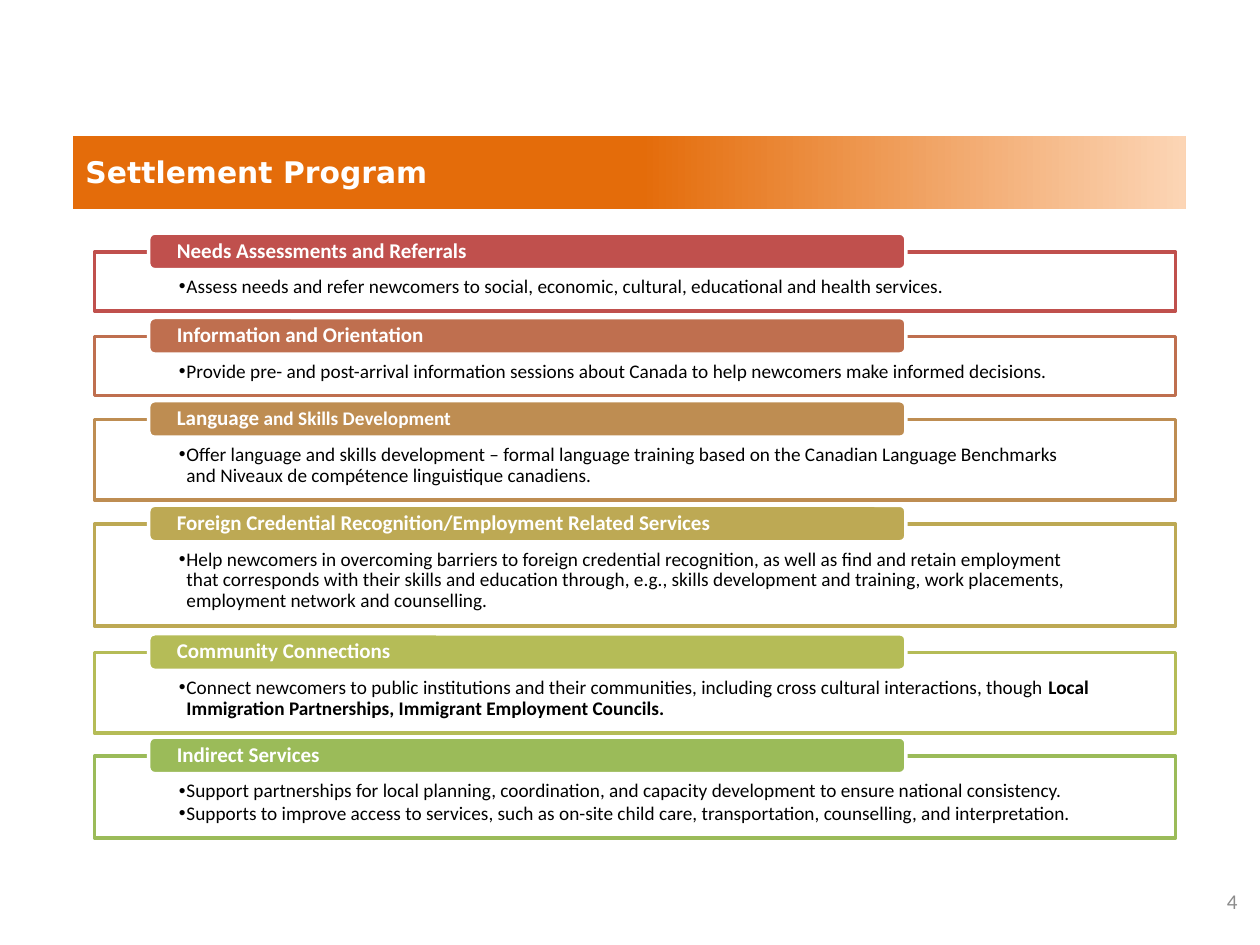
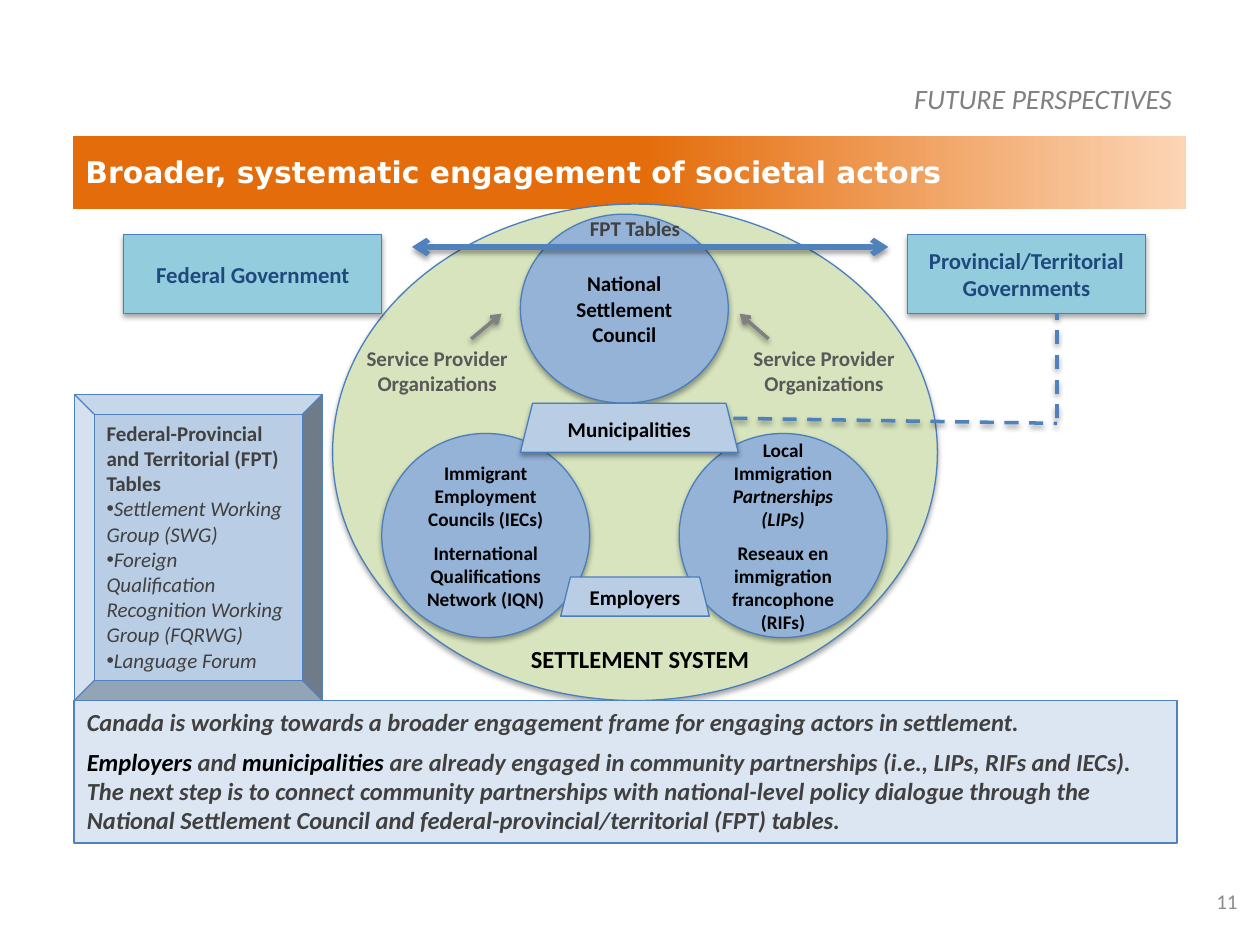
from lxml import etree
from pptx import Presentation
from pptx.dml.color import RGBColor
from pptx.enum.dml import MSO_LINE
from pptx.enum.shapes import MSO_CONNECTOR, MSO_SHAPE
from pptx.enum.text import MSO_ANCHOR, PP_ALIGN
from pptx.oxml.ns import qn
from pptx.util import Inches, Pt

COLORS = {
    "white": "FFFFFF", "black": "000000", "dark": "404040", "slate": "595959",
    "gray": "808080", "number": "8C8C8C", "navy": "1F497D",
    "orange": "E46C0A", "peach": "FCD5B5",
    "green": "D7E4BD", "teal": "93CDDD", "blue": "95B3D7",
    "pale": "B9CDE5", "ice": "DCE6F2", "edge": "4B7EBC", "accent": "4F81BD",
}
LEFT, MIDDLE, TOP = PP_ALIGN.LEFT, MSO_ANCHOR.MIDDLE, MSO_ANCHOR.TOP
CENTER, RIGHT = PP_ALIGN.CENTER, PP_ALIGN.RIGHT
ITALIC = {"italic": True}


def add_shadow(shape, opacity):
    """Give a shape or connector a soft shadow straight below it."""
    properties = shape._element.spPr
    effects = properties.find(qn("a:effectLst"))
    if effects is None:
        effects = etree.SubElement(properties, qn("a:effectLst"))
    outer = etree.SubElement(effects, qn("a:outerShdw"), blurRad="40000", dist="23000",
                             dir="5400000", rotWithShape="0")
    color = etree.SubElement(outer, qn("a:srgbClr"), val=COLORS["black"])
    etree.SubElement(color, qn("a:alpha"), val=str(opacity * 1000))


def add_box(page, kind, at, paragraphs=(), size=12, color="black", fill=None, line=None,
            width=0.75, shadow=False, anchor=MIDDLE, insets=(0.1, 0.05, 0.1, 0.05),
            layout=None, gap=0, bullets_from=None, indent=0, **base):
    """Add a shape (or a text box if kind is None); a paragraph is a list of (text, format)."""
    place = [Inches(value) for value in at]
    if kind is None:
        box = page.shapes.add_textbox(*place)
    else:
        box = page.shapes.add_shape(kind, *place)
        box.shadow.inherit = False
        box.fill.solid()
        box.fill.fore_color.rgb = RGBColor.from_string(COLORS[fill])
        if line:
            box.line.color.rgb = RGBColor.from_string(COLORS[line])
            box.line.width = Pt(width)
        else:
            box.line.fill.background()
        if shadow:
            add_shadow(box, 35)
    frame = box.text_frame
    frame.word_wrap = True
    frame.vertical_anchor = anchor
    for side, value in zip(("left", "top", "right", "bottom"), insets):
        setattr(frame, f"margin_{side}", Inches(value))
    for index, spans in enumerate(paragraphs):
        para = frame.add_paragraph() if index else frame.paragraphs[0]
        for name, value in {"alignment": LEFT, **(layout or {})}.items():
            setattr(para, name, value)
        if index and gap:
            para.space_before = Pt(gap)
        if bullets_from is not None and index >= bullets_from:
            properties = para._p.get_or_add_pPr()
            properties.set("marL", str(Inches(indent)))
            properties.set("indent", str(-Inches(indent)))
            etree.SubElement(properties, qn("a:buFont"), typeface="Arial")
            etree.SubElement(properties, qn("a:buChar"), char="•")
        for text, changes in spans:
            span = para.add_run()
            span.text = text
            values = {"name": "Calibri", "size": Pt(size), "color": color, **base, **changes}
            span.font.color.rgb = RGBColor.from_string(COLORS[values.pop("color")])
            for name, value in values.items():
                setattr(span.font, name, value)
    return box


deck = Presentation()
deck.slide_width, deck.slide_height = Inches(10), Inches(7.5)

# Shared banner, title and page number
pages = []
for title, number in (("Settlement Program", "4"),
                      ("Broader, systematic engagement of societal actors", "11")):
    page = deck.slides.add_slide(deck.slide_layouts[6])
    banner = add_box(page, MSO_SHAPE.RECTANGLE, (0.58, 1.08, 8.83, 0.58), fill="orange")
    banner.fill.gradient()
    banner.fill.gradient_angle = 0
    for stop, position, name in zip(banner.fill.gradient_stops, (0.51, 1), ("orange", "peach")):
        stop.position = position
        stop.color.rgb = RGBColor.from_string(COLORS[name])
    add_box(page, None, (0.58, 1.03, 8.92, 0.67), [[(title, {})]], 17, "white",
            name="DejaVu Sans", bold=True)
    add_box(page, None, (9, 6.95, 0.92, 0.4), [[(number, {})]], 12, "number",
            layout={"alignment": RIGHT})
    pages.append(page)
program, engagement = pages

# Settlement Program: framed services, each with a heading tab
services = [
    ("C0504D", 2, 0.47, [("Needs Assessments and Referrals", {})],
     [[("Assess needs and refer newcomers to social, economic, cultural, educational and "
        "health services.", {})]]),
    ("BF6F4F", 2.67, 0.47, [("Information and Orientation", {})],
     [[("Provide pre- and post-arrival information sessions about Canada to help newcomers "
        "make informed decisions.", {})]]),
    ("BE8D52", 3.33, 0.64,
     [("Language", {}), (" and Skills Development", {"size": Pt(11)})],
     [[("Offer language and skills development – formal language training based on the "
        "Canadian Language Benchmarks and Niveaux de compétence linguistique canadiens.", {})]]),
    ("BDA954", 4.16, 0.81,
     [("Foreign Credential Recognition/Employment Related Services", {})],
     [[("Help newcomers in overcoming barriers to foreign credential recognition, as well as "
        "find and retain employment that corresponds with their skills and education through, "
        "e.g., skills development and training, work placements, employment network and "
        "counselling.", {})]]),
    ("B5BC57", 5.18, 0.64, [("Community Connections", {})],
     [[("Connect newcomers to public institutions and their communities, including cross "
        "cultural interactions, though ", {}),
       ("Local Immigration Partnerships, Immigrant Employment Councils.", {"bold": True})]]),
    ("9BBB59", 6, 0.65, [("Indirect Services", {})],
     [[("Support partnerships for local planning, coordination, and capacity development to "
        "ensure national consistency.", {})],
      [("Supports to improve access to services, such as on-site child care, transportation, "
        "counselling, and interpretation.", {})]]),
]
for shade, top, height, heading, details in services:
    COLORS["service"] = shade
    add_box(program, MSO_SHAPE.RECTANGLE, (0.75, top, 8.58, height), details, 11,
            fill="white", line="service", width=2, anchor=TOP,
            insets=(0.67, 0.2, 0.67, 0.09), bullets_from=0, indent=0.06,
            layout={"line_spacing": 0.9, "space_after": Pt(1)})
    add_box(program, MSO_SHAPE.ROUNDED_RECTANGLE, (1.18, top - 0.15, 6.01, 0.29), [heading],
            12, "white", fill="service", line="white", width=2, bold=True,
            insets=(0.21, 0, 0.21, 0), layout={"line_spacing": 0.9})

# Engagement: settlement system and its actors
actors = [
    (MSO_SHAPE.OVAL, (2.64, 1.62, 4.8, 3.94), "green", "black", 12, []),
    (MSO_SHAPE.RECTANGLE, (0.98, 1.86, 2.05, 0.63), "teal", "navy", 13,
     [[("Federal Government", {})]]),
    (MSO_SHAPE.RECTANGLE, (7.2, 1.86, 1.89, 0.63), "teal", "navy", 13,
     [[("Provincial/Territorial Governments", {})]]),
    (MSO_SHAPE.OVAL, (4.13, 1.7, 1.65, 1.5), "blue", "black", 12,
     [[("National Settlement Council", {})]]),
    (MSO_SHAPE.OVAL, (3.03, 3.44, 1.65, 1.62), "blue", "black", 11,
     [[("Immigrant Employment Councils (IECs)", {})],
      [("International Qualifications Network (IQN)", {})]]),
    (MSO_SHAPE.OVAL, (5.39, 3.44, 1.65, 1.62), "blue", "black", 11,
     [[("Local Immigration ", {}), ("Partnerships (LIPs)", ITALIC)],
      [("Reseaux en immigration francophone (RIFs)", {})]]),
    (MSO_SHAPE.TRAPEZOID, (4.45, 4.58, 1.18, 0.31), "pale", "black", 12,
     [[("Employers", {})]]),
    (MSO_SHAPE.TRAPEZOID, (4.13, 3.2, 1.73, 0.39), "pale", "black", 12,
     [[("Municipalities", {})]]),
]
for kind, at, fill, color, size, paragraphs in actors:
    add_box(engagement, kind, at, paragraphs, size, color, fill=fill, line="edge",
            shadow=paragraphs != [[("Employers", {})]], gap=6, bold=True,
            layout={"alignment": CENTER})

# Arrows and dashed links between the actors
links = [
    ((3.27, 1.96), (7.05, 1.96), "accent", 3, None, ("headEnd", "tailEnd")),
    ((5.82, 3.32), (8.39, 3.36), "accent", 2, MSO_LINE.DASH, ()),
    ((8.39, 3.32), (8.39, 2.49), "accent", 2, MSO_LINE.DASH, ()),
    ((6.1, 2.69), (5.87, 2.49), "gray", 2, None, ("tailEnd",)),
    ((3.74, 2.69), (3.98, 2.49), "gray", 2, None, ("tailEnd",)),
]
for start, end, color, width, dash, arrowheads in links:
    link = engagement.shapes.add_connector(
        MSO_CONNECTOR.STRAIGHT, *[Inches(value) for value in start + end])
    link.line.color.rgb = RGBColor.from_string(COLORS[color])
    link.line.width = Pt(width)
    if dash:
        link.line.dash_style = dash
    for arrowhead in arrowheads:
        etree.SubElement(link.line._get_or_add_ln(), qn(f"a:{arrowhead}"), type="arrow")
    add_shadow(link, 38)

# Free labels
labels = [
    ("Service Provider Organizations", (2.8, 2.69, 1.34, 0.5), 12, "slate"),
    ("Service Provider Organizations", (5.87, 2.69, 1.34, 0.5), 12, "slate"),
    ("SETTLEMENT SYSTEM", (3.74, 5.06, 2.68, 0.34), 14, "black"),
    ("FPT Tables", (4.45, 1.66, 1.18, 0.3), 12, "dark"),
]
for text, at, size, color in labels:
    add_box(engagement, None, at, [[(text, {})]], size, color, anchor=TOP, bold=True,
            layout={"alignment": CENTER})
add_box(engagement, None, (6.57, 0.6, 2.83, 0.37), [[("FUTURE PERSPECTIVES", {})]], 16, "gray",
        anchor=TOP, italic=True, layout={"alignment": RIGHT})

# Summary panel
black = {"color": "black"}
add_box(engagement, MSO_SHAPE.RECTANGLE, (0.59, 5.56, 8.75, 1.13), [
    [("Canada is working towards a broader engagement frame for engaging actors in "
      "settlement.", {})],
    [("Employers", black), (" and ", {}), ("municipalities", black),
     (" are already engaged in community partnerships (i.e., LIPs, RIFs and IECs). The next "
      "step is to connect community partnerships with national-level policy dialogue through "
      "the National Settlement Council and federal-provincial/territorial (FPT) tables.", {})],
], 14, "dark", fill="ice", line="accent", width=1, anchor=TOP, gap=6, bold=True, italic=True)

# Federal-provincial-territorial tables
tables = add_box(engagement, MSO_SHAPE.BEVEL, (0.59, 3.13, 1.97, 2.43), [
    [("Federal-Provincial and Territorial (FPT) Tables", {"bold": True})],
    [("Settlement Working Group (SWG)", ITALIC)],
    [("Foreign Qualification Recognition Working Group (FQRWG)", ITALIC)],
    [("Language Forum", ITALIC)],
], 12, "dark", fill="pale", line="accent", anchor=TOP, bullets_from=1)
tables.adjustments[0] = 0.08

deck.save("out.pptx")
